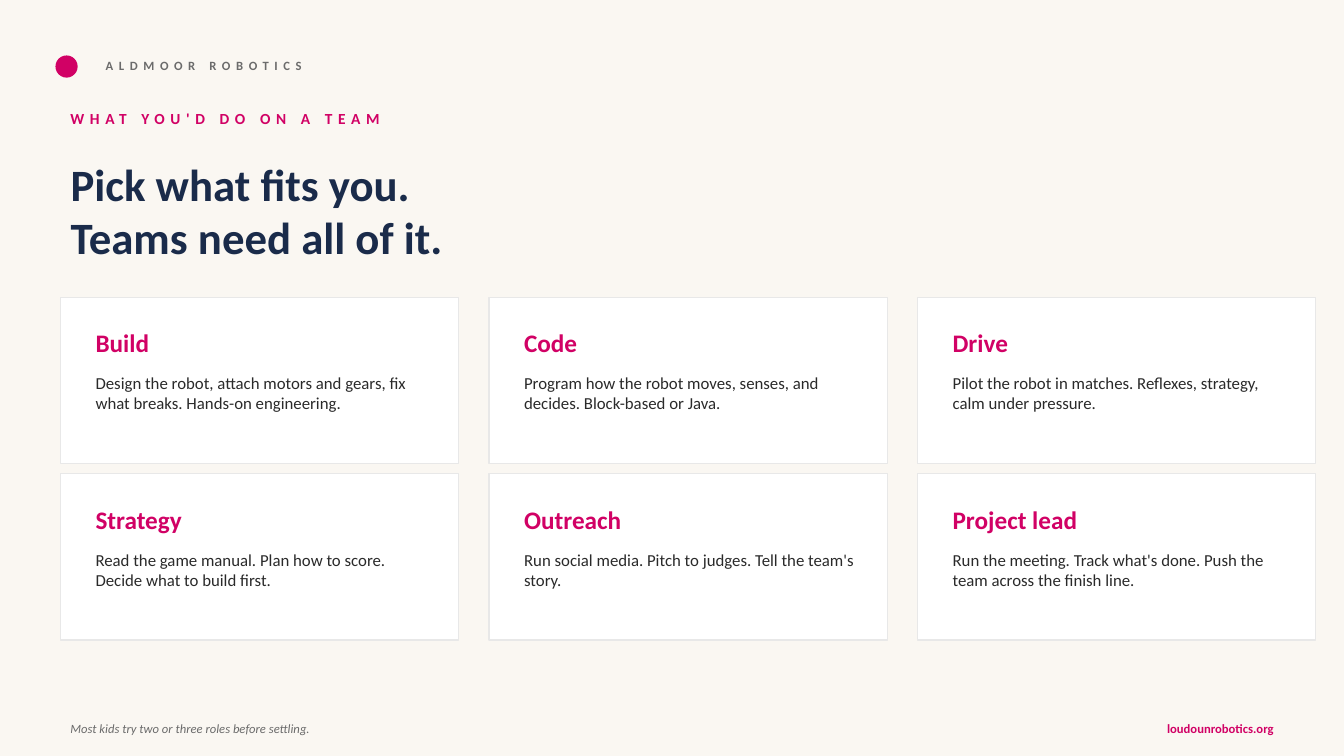
import pptx
import pptx.util
import pptx.dml.color
import pptx.enum.shapes
import pptx.enum.text

Inches, Pt = pptx.util.Inches, pptx.util.Pt
RGB = pptx.dml.color.RGBColor.from_string
SHAPE = pptx.enum.shapes.MSO_SHAPE
ANCHOR = pptx.enum.text.MSO_ANCHOR
ALIGN = pptx.enum.text.PP_ALIGN

COLORS = {"paper": "FAF7F2", "pink": "D10165", "navy": "1A2B4A", "gray": "6B6B6B",
          "ink": "2A2A2A", "card": "FFFFFF", "border": "E8E8E8"}

prs = pptx.Presentation()
prs.slide_width, prs.slide_height = Inches(13.33), Inches(7.5)
s = prs.slides.add_slide(prs.slide_layouts[5])
s.background.fill.solid()
s.background.fill.fore_color.rgb = RGB(COLORS["paper"])


def add_shape(kind, x, y, w, h, fill, line=None):
    sp = s.shapes.add_shape(kind, Inches(x), Inches(y), Inches(w), Inches(h))
    sp.shadow.inherit = False
    sp.fill.solid()
    sp.fill.fore_color.rgb = RGB(COLORS[fill])
    if line:
        sp.line.color.rgb = RGB(COLORS[line])
        sp.line.width = Pt(1)
    else:
        sp.line.fill.background()


def add_text(lines, x, y, w, h, size, color, bold=False, italic=False, spacing=0,
             anchor=ANCHOR.MIDDLE, align=ALIGN.LEFT, sp=None):
    box = Inches(x), Inches(y), Inches(w), Inches(h)
    if sp is None:
        sp = s.shapes.add_textbox(*box)
    else:
        sp.left, sp.top, sp.width, sp.height = box
    tf = sp.text_frame
    tf.word_wrap = True
    tf.auto_size = pptx.enum.text.MSO_AUTO_SIZE.NONE
    tf.vertical_anchor = anchor
    for i, line in enumerate(lines):
        p = tf.add_paragraph() if i else tf.paragraphs[0]
        p.alignment = align
        r = p.add_run()
        r.text = line
        r.font.name, r.font.size = "Calibri", Pt(size)
        r.font.bold, r.font.italic = bold, italic
        r.font.color.rgb = RGB(COLORS[color])
        if spacing:
            r.font._element.set("spc", str(spacing * 100))


# Header
add_shape(SHAPE.OVAL, 0.55, 0.55, 0.22, 0.22, "pink")
add_text(["ALDMOOR ROBOTICS"], 0.95, 0.5, 5, 0.3, 9, "gray", bold=True, spacing=4)
add_text(["WHAT YOU'D DO ON A TEAM"], 0.6, 1, 8, 0.35, 11, "pink", bold=True, spacing=4)
add_text(["Pick what fits you.", "Teams need all of it."], 0.6, 1.5, 12.13, 1.15, 32, "navy",
         bold=True, anchor=ANCHOR.TOP, sp=s.shapes.title)

# Role cards, three to a row
roles = [
    ("Build", "Design the robot, attach motors and gears, fix what breaks. Hands-on engineering."),
    ("Code", "Program how the robot moves, senses, and decides. Block-based or Java."),
    ("Drive", "Pilot the robot in matches. Reflexes, strategy, calm under pressure."),
    ("Strategy", "Read the game manual. Plan how to score. Decide what to build first."),
    ("Outreach", "Run social media. Pitch to judges. Tell the team's story."),
    ("Project lead", "Run the meeting. Track what's done. Push the team across the finish line."),
]
card_w, card_h, gap_x, gap_y = 3.95, 1.65, 0.3, 0.1
for i, (role, duties) in enumerate(roles):
    row, col = divmod(i, 3)
    x = 0.6 + col * (card_w + gap_x)
    y = 2.95 + row * (card_h + gap_y)
    add_shape(SHAPE.RECTANGLE, x, y, card_w, card_h, "card", "border")
    add_text([role], x + 0.25, y + 0.2, 3.5, 0.5, 18, "pink", bold=True)
    add_text([duties], x + 0.25, y + 0.7, 3.5, 0.9, 12, "ink", anchor=ANCHOR.TOP)

# Footer
add_text(["Most kids try two or three roles before settling."], 0.6, 7.08, 12.13, 0.3, 9, "gray",
         italic=True)
add_text(["loudounrobotics.org"], 10.33, 7.08, 2.4, 0.3, 9, "pink", bold=True, align=ALIGN.RIGHT)

prs.save("out.pptx")
